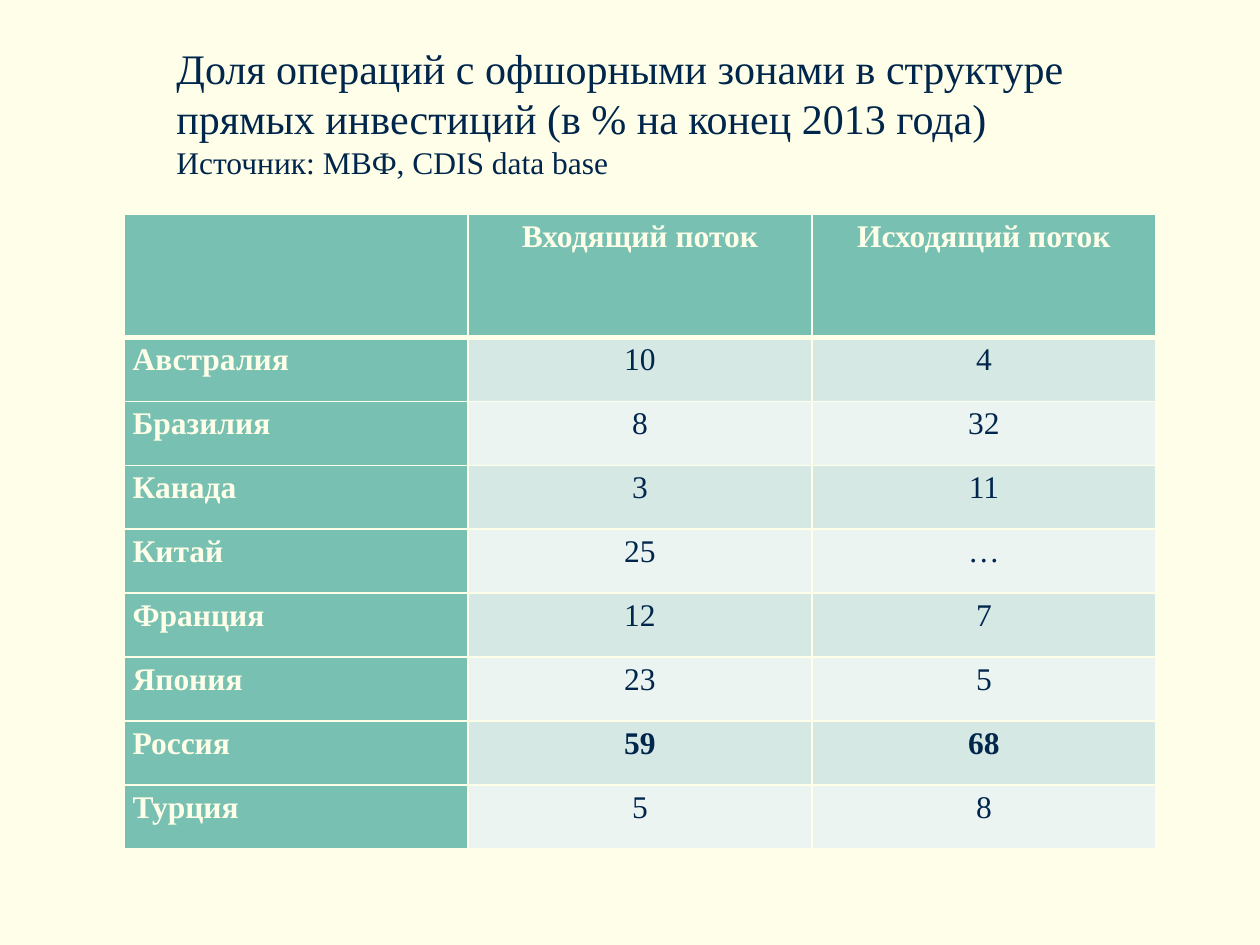
from dataclasses import dataclass

import pptx
import pptx.dml.color
import pptx.enum.text
import pptx.oxml
import pptx.oxml.ns
import pptx.util

Pt = pptx.util.Pt
Align = pptx.enum.text.PP_ALIGN
FONT = "Times New Roman"
HUES = {"cream": "FFFFE9", "navy": "00264C", "teal": "78C0B2",
        "mint": "D6E8E4", "pale": "ECF4F2"}
HEAD = ("", "Входящий поток", "Исходящий поток")


@dataclass
class Country:
    name: str
    inflow: str
    outflow: str
    bold: bool = False


ROWS = [
    Country("Австралия", "10", "4"),
    Country("Бразилия", "8", "32"),
    Country("Канада", "3", "11"),
    Country("Китай", "25", "…"),
    Country("Франция", "12", "7"),
    Country("Япония", "23", "5"),
    Country("Россия", "59", "68", bold=True),
    Country("Турция", "5", "8"),
]


def rgb(hue: str) -> pptx.dml.color.RGBColor:
    return pptx.dml.color.RGBColor.from_string(HUES[hue])


def style(par, size: float, hue: str, bold: bool = False) -> None:
    par.font.name = FONT
    par.font.size = Pt(size)
    par.font.bold = bold
    par.font.color.rgb = rgb(hue)


def edge(cell, side: str, width: float) -> None:
    """Add one cell border; call in the order L, R, T, B, before the fill."""
    cell._tc.get_or_add_tcPr().append(pptx.oxml.parse_xml(
        f'<a:ln{side} {pptx.oxml.ns.nsdecls("a")} w="{Pt(width)}"><a:solidFill>'
        f'<a:srgbClr val="{HUES["cream"]}"/></a:solidFill></a:ln{side}>'))


def draw_cell(cell, text: str, row: int, col: int, bold: bool) -> None:
    label = row == 0 or col == 0
    for side in "LRTB":
        thick = (row, side) in ((0, "B"), (1, "T"))
        edge(cell, side, 3 if thick else 1)
    cell.fill.solid()
    cell.fill.fore_color.rgb = rgb(
        "teal" if label else "mint" if row % 2 else "pale")
    cell.margin_left = cell.margin_right = Pt(5)
    cell.margin_top = cell.margin_bottom = Pt(0)
    par = cell.text_frame.paragraphs[0]
    par.text = text
    par.alignment = Align.CENTER if row == 0 or col else Align.LEFT
    par.line_spacing = 1.15
    style(par, 18, "cream" if label else "navy", label or bold)


def draw_table(slide) -> None:
    table = slide.shapes.add_table(
        len(ROWS) + 1, len(HEAD), Pt(70.8), Pt(122.4), Pt(589.8), Pt(362.8)).table
    for col in table.columns:
        col.width = Pt(196.6)
    for num, row in enumerate(table.rows):
        row.height = Pt(36.55 if num else 70.4)
    lines = [(HEAD, True)]
    lines += [((c.name, c.inflow, c.outflow), c.bold) for c in ROWS]
    for row, (texts, bold) in enumerate(lines):
        for col, text in enumerate(texts):
            draw_cell(table.cell(row, col), text, row, col, bold)


def draw_title(slide) -> None:
    title = slide.shapes.title
    title.left, title.top = Pt(93.6), Pt(20.2)
    title.width, title.height = Pt(538.6), Pt(87.1)
    frame = title.text_frame
    frame.word_wrap = True
    frame.auto_size = pptx.enum.text.MSO_AUTO_SIZE.SHAPE_TO_FIT_TEXT
    frame.vertical_anchor = pptx.enum.text.MSO_ANCHOR.MIDDLE
    frame.text = ("Доля операций с офшорными зонами в структуре прямых "
                  "инвестиций (в % на конец 2013 года)\n"
                  "Источник: МВФ, CDIS data base")
    for par, size in zip(frame.paragraphs, (24, 18)):
        par.alignment = Align.LEFT
        par.space_before = Pt(0)
        style(par, size, "navy")


def main() -> None:
    deck = pptx.Presentation()
    deck.slide_width, deck.slide_height = Pt(720), Pt(540)
    slide = deck.slides.add_slide(deck.slide_layouts.get_by_name("Title Only"))
    slide.background.fill.solid()
    slide.background.fill.fore_color.rgb = rgb("cream")
    draw_table(slide)
    draw_title(slide)
    deck.save("out.pptx")


if __name__ == "__main__":
    main()
